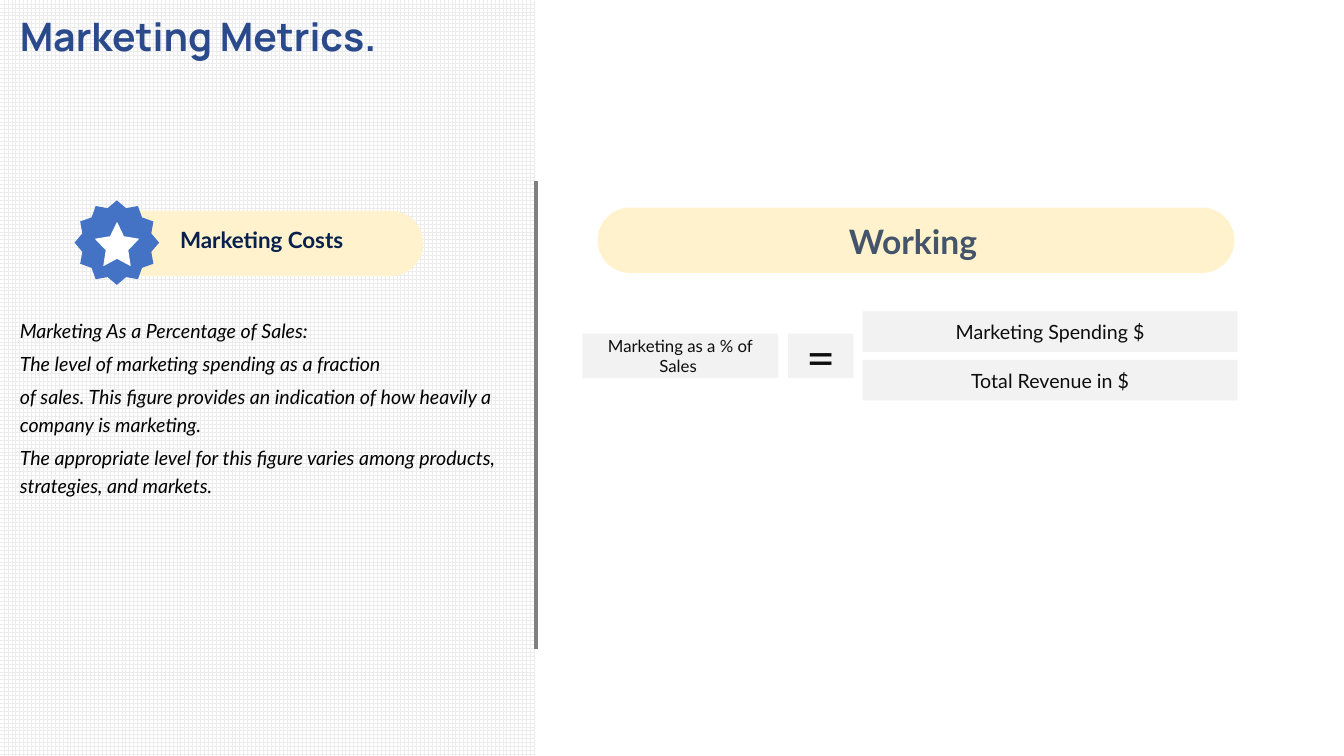
from dataclasses import dataclass

from lxml.etree import SubElement
from pptx import Presentation
from pptx.dml.color import RGBColor
from pptx.enum.dml import MSO_PATTERN
from pptx.enum.shapes import MSO_CONNECTOR, MSO_SHAPE
from pptx.enum.text import MSO_ANCHOR, PP_ALIGN
from pptx.oxml.ns import qn
from pptx.util import Cm, Pt


@dataclass(frozen=True)
class Theme:
    head_font: str = "Manrope"
    font: str = "Lato"
    title: str = "2A4A8B"
    label: str = "08204D"
    slate: str = "44546A"
    ink: str = "0D0D0D"
    black: str = "000000"
    white: str = "FFFFFF"
    grid: str = "ECECEC"
    cream: str = "FFF2CC"
    blue: str = "4472C4"
    box: str = "F2F2F2"
    rule: str = "808080"
    title_size: float = 28
    working_size: float = 24
    label_size: float = 16
    body_size: float = 14
    small_size: float = 12
    equal_size: float = 36


class Deck:
    def __init__(self, theme):
        self.theme = theme
        self.deck = Presentation()
        self.deck.slide_width, self.deck.slide_height = Cm(33.87), Cm(19.05)
        self.slide = self.deck.slides.add_slide(self.deck.slide_layouts[6])
        self.shapes = self.slide.shapes

    def group(self):
        return self.shapes.add_group_shape().shapes

    def shape(self, kind, area, color, adj=None, home=None):
        item = (home or self.shapes).add_shape(kind, *map(Cm, area))
        item.shadow.inherit = False
        item.line.fill.background()
        item.fill.solid()
        item.fill.fore_color.rgb = RGBColor.from_string(color)
        if adj is not None:
            item.adjustments[0] = adj
        return item

    def panel(self, area):
        fill = self.shape(MSO_SHAPE.RECTANGLE, area, self.theme.white).fill
        fill.patterned()
        fill.pattern = MSO_PATTERN.LARGE_GRID
        fill.fore_color.rgb = RGBColor.from_string(self.theme.grid)
        fill.back_color.rgb = RGBColor.from_string(self.theme.white)

    def pill(self, area, home):
        self.shape(MSO_SHAPE.ROUNDED_RECTANGLE, area, self.theme.cream, 0.5, home)

    def label(self, item, words, size, color, font=None, bold=False,
              italic=False, align=PP_ALIGN.LEFT, anchor=MSO_ANCHOR.TOP, wrap=True):
        frame = item.text_frame
        frame.text = words
        frame.word_wrap = wrap
        frame.vertical_anchor = anchor
        for para in frame.paragraphs:
            para.alignment = align
            for run in para.runs:
                run.font.name = font or self.theme.font
                run.font.size = Pt(size)
                run.font.bold = bold
                run.font.italic = italic
                run.font.color.rgb = RGBColor.from_string(color)
        return frame

    def text(self, area, words, size, color, home=None, **style):
        item = (home or self.shapes).add_textbox(*map(Cm, area))
        return self.label(item, words, size, color, **style)

    def box(self, area, words, size):
        item = self.shape(MSO_SHAPE.RECTANGLE, area, self.theme.box)
        self.label(item, words, size, self.theme.ink,
                   align=PP_ALIGN.CENTER, anchor=MSO_ANCHOR.MIDDLE)

    def rule(self, x, top, bottom):
        line = self.shapes.add_connector(
            MSO_CONNECTOR.STRAIGHT, Cm(x), Cm(top), Cm(x), Cm(bottom))
        line.line.color.rgb = RGBColor.from_string(self.theme.rule)
        line.line.width = Pt(3)
        SubElement(line._element.spPr, qn("a:effectLst"))


def main():
    theme = Theme()
    deck = Deck(theme)

    # Left panel with title and description
    deck.panel((0, 0, 13.49, 19.05))
    deck.text((0.25, 0.18, 10.72, 1.45), "Marketing Metrics.",
              theme.title_size, theme.title, font=theme.head_font, bold=True)
    story = "\n".join((
        "Marketing As a Percentage of Sales:",
        "The level of marketing spending as a fraction",
        "of sales. This figure provides an indication of how heavily a company is marketing.",
        "The appropriate level for this figure varies among products, strategies, and markets.",
    ))
    body = deck.text((0.25, 7.8, 13.41, 4.9), story,
                     theme.body_size, theme.black, italic=True)
    for i, para in enumerate(body.paragraphs):
        para.line_spacing = 1.2
        para.space_before = Pt(3.2 if i else 0)

    # Divider
    deck.rule(13.51, 4.57, 16.36)

    # Marketing Costs badge
    badge = deck.group()
    deck.pill((2.24, 5.31, 8.43, 1.65), badge)
    deck.shape(MSO_SHAPE.STAR_12_POINT, (1.88, 5.05, 2.13, 2.13),
               theme.blue, 0.422, badge)
    deck.shape(MSO_SHAPE.STAR_5_POINT, (2.39, 5.59, 1.12, 1.12),
               theme.white, 0.254, badge)
    deck.text((4.29, 5.56, 4.62, 0.94), "Marketing Costs", theme.label_size,
              theme.label, badge, bold=True, anchor=MSO_ANCHOR.MIDDLE, wrap=False)

    # Formula
    deck.box((14.68, 8.41, 4.93, 1.12), "Marketing as a % of Sales ", theme.small_size)
    for i, words in enumerate(("Marketing Spending $", "Total Revenue in $")):
        deck.box((21.74, 7.85 + 1.22 * i, 9.45, 1.02), words, theme.body_size)
    deck.box((19.86, 8.41, 1.65, 1.12), "=", theme.equal_size)

    # Working header
    head = deck.group()
    deck.pill((15.06, 5.23, 16.05, 1.65), head)
    deck.text((15.72, 5.44, 14.78, 1.27), "Working ", theme.working_size, theme.slate,
              head, bold=True, align=PP_ALIGN.CENTER, anchor=MSO_ANCHOR.BOTTOM)

    deck.deck.save("out.pptx")


if __name__ == "__main__":
    main()
